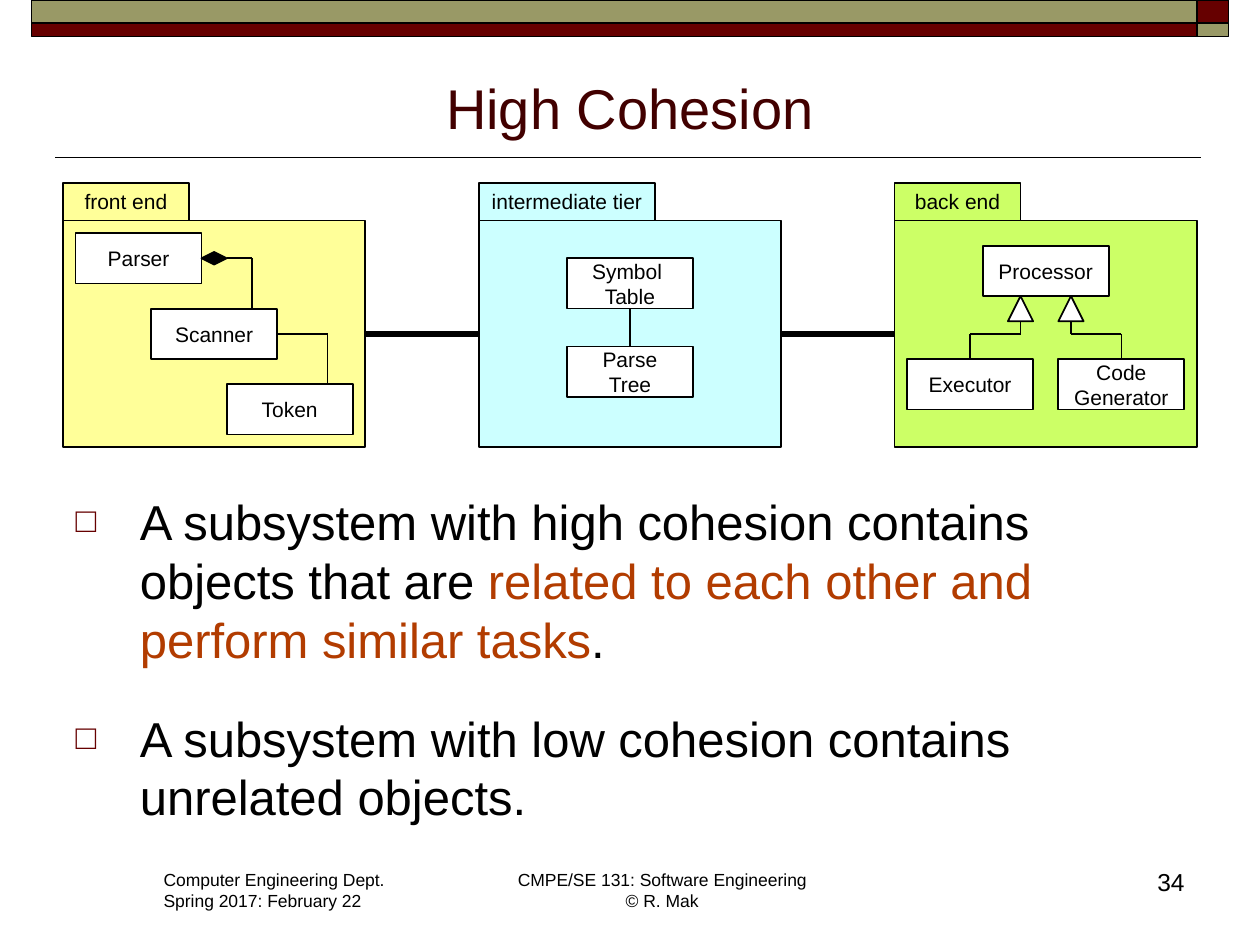
"""Build the High Cohesion slide with its three package diagrams."""
from itertools import pairwise

from lxml.etree import SubElement
from pptx import Presentation
from pptx.dml.color import RGBColor
from pptx.enum.shapes import MSO_CONNECTOR as Link, MSO_SHAPE as Kind
from pptx.enum.text import MSO_ANCHOR as Anchor, MSO_AUTO_SIZE as Fit, PP_ALIGN as Align
from pptx.oxml.ns import qn
from pptx.util import Inches, Pt

BLACK, WHITE, MAROON, OLIVE, RUST = "000000", "FFFFFF", "660000", "999966", "B23C00"

TITLE = "High Cohesion"
BULLETS = [
    [("A subsystem with high cohesion contains objects that are ", BLACK),
     ("related to each other and perform similar tasks", RUST), (".", BLACK)],
    [("A subsystem with low cohesion contains unrelated objects.", BLACK)],
]
PACKS = [
    ("front end", "FFFF99", 1, [("Parser", 0.1, 0.1), ("Scanner", 0.7, 0.7), ("Token", 1.3, 1.3)]),
    ("intermediate tier", "CCFFFF", 1.4, [("Symbol \nTable", 0.7, 0.3), ("Parse\nTree", 0.7, 1)]),
    ("back end", "CCFF66", 1,
     [("Processor", 0.7, 0.2), ("Executor", 0.1, 1.1), ("Code\nGenerator", 1.3, 1.1)]),
]
ROUTES = [
    [(1.8, 2.05), (2, 2.05), (2, 2.45)],
    [(2.2, 2.65), (2.6, 2.65), (2.6, 3.05)],
    [(5, 2.45), (5, 2.75)],
    [(8.1, 2.55), (8.1, 2.65), (7.7, 2.65), (7.7, 2.85)],
    [(8.5, 2.55), (8.5, 2.65), (8.9, 2.65), (8.9, 2.85)],
]
MARKS = [
    (Kind.DIAMOND, (1.6, 2, 0.2, 0.1), BLACK),
    (Kind.ISOSCELES_TRIANGLE, (8, 2.35, 0.2, 0.2), WHITE),
    (Kind.ISOSCELES_TRIANGLE, (8.4, 2.35, 0.2, 0.2), WHITE),
]
NOTES = [
    ("Computer Engineering Dept.\nSpring 2017: February 22", (1.2, 6.85, 1.97, 0.44), 10, Align.LEFT),
    ("CMPE/SE 131: Software Engineering\v© R. Mak", (4, 6.85, 2.51, 0.44), 10, Align.CENTER),
    ("34", (7.42, 6.83, 2.08, 0.5), 14, Align.RIGHT),
]
LEFT, TOP, WIDE, HIGH, GAP = 0.5, 1.75, 2.4, 1.8, 0.9
TAB = 0.3


def paint(target, color):
    target.rgb = RGBColor.from_string(color)


def style(item, size, color=BLACK):
    item.font.name = "Arial"
    item.font.size = Pt(size)
    paint(item.font.color, color)


def write(frame, text, size, align, color=BLACK):
    frame.text = text
    for para in frame.paragraphs:
        para.alignment = align
        for run in para.runs:
            style(run, size, color)


def place(shape, area):
    shape.left, shape.top, shape.width, shape.height = map(Inches, area)


def block(slide, area, color, text="", kind=Kind.RECTANGLE):
    shape = slide.shapes.add_shape(kind, *map(Inches, area))
    shape.shadow.inherit = False
    shape.fill.solid()
    paint(shape.fill.fore_color, color)
    paint(shape.line.color, BLACK)
    shape.line.width = Pt(1)
    if text:
        frame = shape.text_frame
        frame.word_wrap = False
        frame.vertical_anchor = Anchor.MIDDLE
        write(frame, text, 12, Align.CENTER)


def route(slide, points, width=1):
    for start, end in pairwise(points):
        line = slide.shapes.add_connector(Link.STRAIGHT, *map(Inches, start + end))
        paint(line.line.color, BLACK)
        line.line.width = Pt(width)
        SubElement(line._element.spPr, qn("a:effectLst"))


def bullet(para):
    props = para._p.get_or_add_pPr()
    props.set("marL", str(Inches(0.51)))
    props.set("indent", str(Inches(-0.51)))
    tint = SubElement(props, qn("a:buClr"))
    SubElement(tint, qn("a:srgbClr"), val=MAROON)
    SubElement(props, qn("a:buSzPct"), val="70000")
    SubElement(props, qn("a:buFont"), typeface="Arial")
    SubElement(props, qn("a:buChar"), char="□")


def banner(slide):
    route(slide, [(0.44, 1.25), (9.53, 1.25)])
    for top, high, main, end in [(0, 0.18, OLIVE, MAROON), (0.18, 0.11, MAROON, OLIVE)]:
        block(slide, (0.25, top, 9.25, high), main)
        block(slide, (9.5, top, 0.25, high), end)


def prose(slide):
    title, body = slide.placeholders
    place(title, (0.5, 0.45, 9, 0.72))
    title.text_frame.vertical_anchor = Anchor.BOTTOM
    title.text_frame.auto_size = Fit.NONE
    write(title.text_frame, TITLE, 32, Align.CENTER, "420000")

    place(body, (0.5, 3.85, 9, 2.9))
    frame = body.text_frame
    frame.auto_size = Fit.NONE
    for i, parts in enumerate(BULLETS):
        para = frame.add_paragraph() if i else frame.paragraphs[0]
        para.space_before = Pt(23 if i else 0)
        bullet(para)
        for text, color in parts:
            run = para.add_run()
            run.text = text
            style(run, 28, color)


def diagram(slide):
    mid = TOP + HIGH / 2
    for i, (name, color, tab, classes) in enumerate(PACKS):
        x = LEFT + i * (WIDE + GAP)
        block(slide, (x, TOP, WIDE, HIGH), color)
        block(slide, (x, TOP - TAB, tab, TAB), color, name)
        for label, dx, dy in classes:
            block(slide, (x + dx, TOP + dy, 1, 0.4), WHITE, label)
        if i:
            route(slide, [(x - GAP, mid), (x, mid)], 3)
    for points in ROUTES:
        route(slide, points)
    for kind, area, color in MARKS:
        block(slide, area, color, kind=kind)


def footer(slide):
    for text, area, size, align in NOTES:
        frame = slide.shapes.add_textbox(*map(Inches, area)).text_frame
        frame.word_wrap = True
        write(frame, text, size, align)


def main():
    deck = Presentation()
    deck.slide_width, deck.slide_height = Inches(10), Inches(7.5)
    slide = deck.slides.add_slide(deck.slide_layouts[1])
    banner(slide)
    prose(slide)
    diagram(slide)
    footer(slide)
    deck.save("out.pptx")


if __name__ == "__main__":
    main()
